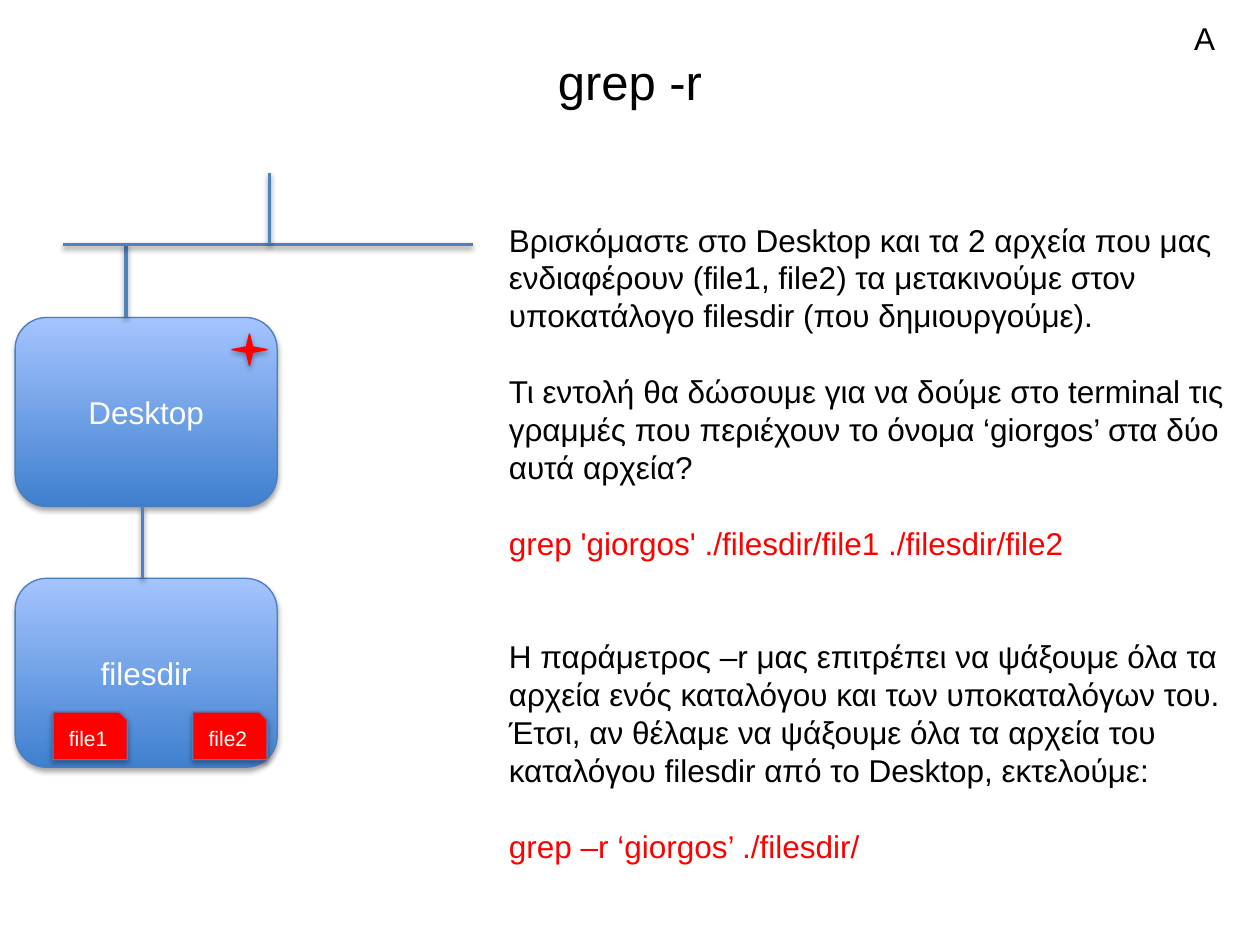
from pptx import Presentation
from pptx.dml.color import RGBColor
from pptx.enum.shapes import MSO_CONNECTOR, MSO_SHAPE
from pptx.enum.text import MSO_ANCHOR, PP_ALIGN
from pptx.oxml import parse_xml
from pptx.oxml.ns import nsdecls
from pptx.util import Inches, Pt

COLS, ROWS = 100, 75
LEADING = 21.65
BLACK, WHITE, RED = "000000", "FFFFFF", "FF0000"
EDGE, LINK = "4B7EBC", "4F81BD"
GRADIENT = ("3F80CE", "A4C4FF")


def rgb(value):
    return RGBColor.from_string(value)


def write(p, text, size=18, color=BLACK, align=PP_ALIGN.LEFT, leading=None, gap=0):
    p.alignment = align
    p.space_before = Pt(gap)
    if leading:
        p.line_spacing = Pt(leading)
    r = p.add_run()
    r.text = text
    r.font.name = "Arial"
    r.font.size = Pt(size)
    r.font.color.rgb = rgb(color)


class Board:
    def __init__(self, prs):
        self.s = prs.slides.add_slide(prs.slide_layouts[6])
        self.dx = prs.slide_width / COLS
        self.dy = prs.slide_height / ROWS

    def place(self, x, y, w, h):
        return [round(v) for v in (x * self.dx, y * self.dy, w * self.dx, h * self.dy)]

    def shadow(self, sp, alpha, dist):
        sp._element.spPr.append(parse_xml(
            f'<a:effectLst {nsdecls("a")}><a:outerShdw blurRad="{Pt(3.1)}" '
            f'dist="{Pt(dist)}" dir="5400000" rotWithShape="0"><a:srgbClr val="{BLACK}">'
            f'<a:alpha val="{alpha * 1000}"/></a:srgbClr></a:outerShdw></a:effectLst>'))

    def shape(self, kind, box, text="", size=18, fill=RED, line=EDGE):
        sp = self.s.shapes.add_shape(kind, *self.place(*box))
        if isinstance(fill, tuple):
            sp.fill.gradient()
            sp.fill.gradient_angle = 90
            for stop, color in zip(sp.fill.gradient_stops, fill):
                stop.color.rgb = rgb(color)
        else:
            sp.fill.solid()
            sp.fill.fore_color.rgb = rgb(fill)
        sp.line.color.rgb = rgb(line)
        sp.line.width = Pt(0.75)
        self.shadow(sp, 35, 1.8)
        if text:
            tf = sp.text_frame
            tf.vertical_anchor = MSO_ANCHOR.MIDDLE
            write(tf.paragraphs[0], text, size=size, color=WHITE, align=PP_ALIGN.CENTER)

    def link(self, x1, y1, x2, y2):
        ends = self.place(x1, y1, x2, y2)
        sp = self.s.shapes.add_connector(MSO_CONNECTOR.STRAIGHT, *ends)
        sp.line.color.rgb = rgb(LINK)
        sp.line.width = Pt(2)
        self.shadow(sp, 38, 1.6)

    def text(self, box, paragraphs, anchor=MSO_ANCHOR.TOP, **style):
        tf = self.s.shapes.add_textbox(*self.place(*box)).text_frame
        tf.word_wrap = True
        tf.vertical_anchor = anchor
        for i, (text, extra) in enumerate(paragraphs):
            p = tf.add_paragraph() if i else tf.paragraphs[0]
            write(p, text, **style, **extra)


def main():
    prs = Presentation()
    prs.slide_width, prs.slide_height = Inches(10), Inches(7.5)
    board = Board(prs)

    board.text((5, 3, 90, 6.8), [("grep -r", {})], anchor=MSO_ANCHOR.MIDDLE,
               size=28, align=PP_ALIGN.CENTER)
    board.text((93.8, 1, 5, 4), [("Α", {})], leading=LEADING)

    for name, y in (("filesdir", 45.9), ("Desktop", 25.2)):
        board.shape(MSO_SHAPE.ROUNDED_RECTANGLE, (1.2, y, 20.8, 15), name, fill=GRADIENT)
    board.shape(MSO_SHAPE.STAR_4_POINT, (18.4, 26.5, 2.8, 2.5), line=RED)

    for ends in ((10, 19.4, 10, 25.2), (5, 19.4, 37.5, 19.4),
                 (21.4, 13.7, 21.4, 19.4), (11.3, 40.2, 11.3, 45.9)):
        board.link(*ends)

    for name, x in (("file1", 4.2), ("file2", 15.3)):
        board.shape(MSO_SHAPE.SNIP_1_RECTANGLE, (x, 56.5, 5.9, 3.8), name, size=12)

    board.text((39.4, 17, 59, 52.5), [
        ("Βρισκόμαστε στο Desktop και τα 2 αρχεία που μας ενδιαφέρουν (file1, file2) "
         "τα μετακινούμε στον υποκατάλογο filesdir (που δημιουργούμε).", {}),
        ("Τι εντολή θα δώσουμε για να δούμε στο terminal τις γραμμές που περιέχουν "
         "το όνομα ‘giorgos’ στα δύο αυτά αρχεία?", {"gap": LEADING}),
        ("grep 'giorgos' ./filesdir/file1 ./filesdir/file2", {"gap": LEADING, "color": RED}),
        ("Η παράμετρος –r μας επιτρέπει να ψάξουμε όλα τα αρχεία ενός καταλόγου "
         "και των υποκαταλόγων του.", {"gap": 2 * LEADING}),
        ("Έτσι, αν θέλαμε να ψάξουμε όλα τα αρχεία του καταλόγου filesdir από το "
         "Desktop, εκτελούμε:", {}),
        ("grep –r ‘giorgos’ ./filesdir/", {"gap": LEADING, "color": RED}),
    ], leading=LEADING)

    prs.save("out.pptx")


if __name__ == "__main__":
    main()
